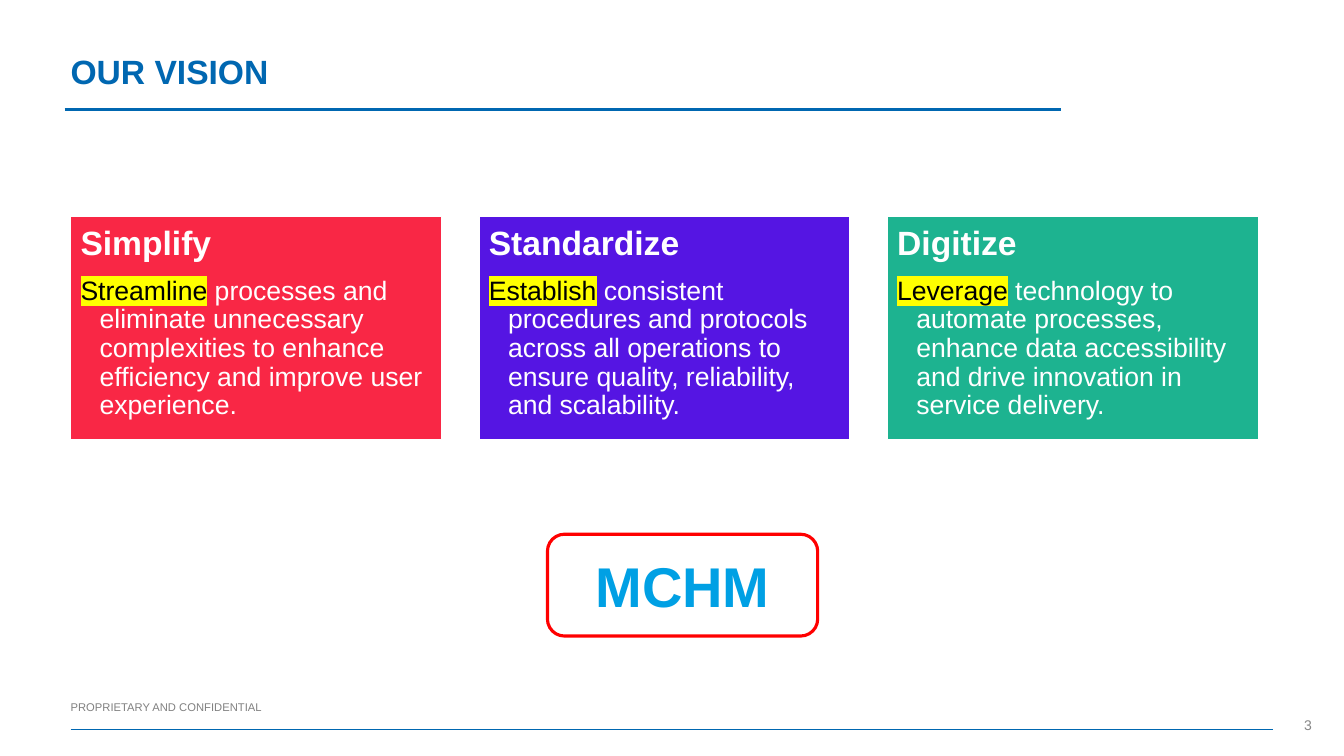
from lxml import etree
from pptx import Presentation
from pptx.dml.color import RGBColor
from pptx.enum.shapes import MSO_CONNECTOR as CONN, MSO_SHAPE as SHAPE
from pptx.enum.text import MSO_ANCHOR as ANCHOR, PP_ALIGN as ALIGN
from pptx.oxml.ns import qn
from pptx.util import Inches, Pt

BLUE = "0067B1"
CARDS = [
    ("F92745", "Simplify", "Streamline",
     " processes and eliminate unnecessary complexities to enhance efficiency "
     "and improve user experience."),
    ("5515E3", "Standardize", "Establish",
     " consistent procedures and protocols across all operations to ensure "
     "quality, reliability, and scalability."),
    ("1DB390", "Digitize", "Leverage",
     " technology to automate processes, enhance data accessibility and drive "
     "innovation in service delivery."),
]


def rgb(color):
    return RGBColor.from_string(color)


def style(r, size, color, bold=False):
    r.font.name = "Arial"
    r.font.size = Pt(size)
    r.font.bold = bold
    r.font.color.rgb = rgb(color)


def highlight(r, color):
    mark = etree.Element(qn("a:highlight"))
    etree.SubElement(mark, qn("a:srgbClr"), val=color)
    r.font._element.find(qn("a:solidFill")).addnext(mark)


def set_margins(tf, size):
    tf.margin_left = tf.margin_right = Inches(size)
    tf.margin_top = tf.margin_bottom = Inches(size)


def add_label(s, box, text, size, color, bold=False, anchor=ANCHOR.BOTTOM,
              align=ALIGN.LEFT):
    tf = s.shapes.add_textbox(*map(Inches, box)).text_frame
    tf.word_wrap = True
    tf.vertical_anchor = anchor
    set_margins(tf, 0)
    tf.text = text
    p = tf.paragraphs[0]
    p.alignment = align
    style(p.runs[0], size, color, bold)
    return p


def add_rule(s, left, right, y, width):
    line = s.shapes.add_connector(
        CONN.STRAIGHT, Inches(left), Inches(y), Inches(right), Inches(y))
    line.line.color.rgb = rgb(BLUE)
    line.line.width = Pt(width)
    etree.SubElement(line._element.spPr, qn("a:effectLst"))


def add_box(s, kind, box, line_color, line_width, fill=None):
    sp = s.shapes.add_shape(kind, *map(Inches, box))
    sp.shadow.inherit = False
    if fill:
        sp.fill.solid()
        sp.fill.fore_color.rgb = rgb(fill)
    else:
        sp.fill.background()
    sp.line.color.rgb = rgb(line_color)
    sp.line.width = Pt(line_width)
    sp.text_frame.word_wrap = True
    return sp


def add_header(s, left, top, width, height):
    p = add_label(s, (left, top, width, height), "OUR VISION", 24, BLUE,
                  bold=True, anchor=ANCHOR.MIDDLE)
    p.line_spacing = 0.9
    add_rule(s, left - 0.06, left + width, top + 0.74, 2.25)


def add_card(s, box, fill, heading, keyword, rest):
    tf = add_box(s, SHAPE.RECTANGLE, box, "FFFFFF", 1, fill).text_frame
    tf.vertical_anchor = ANCHOR.TOP
    set_margins(tf, 0.1)

    # Heading
    tf.text = heading
    p = tf.paragraphs[0]
    p.space_after = Pt(10)
    style(p.runs[0], 24, "FFFFFF", bold=True)

    # Body with a hanging indent and a highlighted keyword
    p = tf.add_paragraph()
    p.level = 1
    p.text = keyword
    p.add_run().text = rest
    pPr = p._p.get_or_add_pPr()
    pPr.set("marL", str(Inches(0.19)))
    pPr.set("indent", str(-Inches(0.19)))
    for r, color in zip(p.runs, ("000000", "FFFFFF")):
        style(r, 19, color)
    highlight(p.runs[0], "FFFF00")

    for p in tf.paragraphs:
        p.alignment = ALIGN.LEFT
        p.line_spacing = 0.9


def add_cards(s, left, top, width, height):
    gap = 0.37
    card_width = (width - gap * (len(CARDS) - 1)) / len(CARDS)
    for i, card in enumerate(CARDS):
        x = left + i * (card_width + gap)
        add_card(s, (x, top, card_width, height), *card)


def add_badge(s, *box):
    sp = add_box(s, SHAPE.ROUNDED_RECTANGLE, box, "FF0000", 2.25)
    tf = sp.text_frame
    tf.vertical_anchor = ANCHOR.MIDDLE
    tf.text = "MCHM"
    p = tf.paragraphs[0]
    p.alignment = ALIGN.CENTER
    style(p.runs[0], 40, "00A0E4", bold=True)


def add_footer(s, left, top, width):
    add_label(s, (left, top, 10.92, 0.13), "PROPRIETARY AND CONFIDENTIAL",
              8, "808080")
    add_rule(s, left, left + width, top + 0.29, 1)
    add_label(s, (left + width + 0.11, top + 0.13, 0.27, 0.19), "3",
              10, "868686", align=ALIGN.RIGHT)


def main():
    prs = Presentation()
    prs.slide_width = Inches(13.33)
    prs.slide_height = Inches(7.5)
    s = prs.slides.add_slide(prs.slide_layouts[6])
    add_footer(s, 0.7, 6.95, 11.93)
    add_header(s, 0.7, 0.35, 9.82, 0.76)
    add_badge(s, 5.43, 5.3, 2.68, 1.01)
    add_cards(s, 0.7, 2.15, 11.78, 2.21)
    prs.save("out.pptx")


if __name__ == "__main__":
    main()
